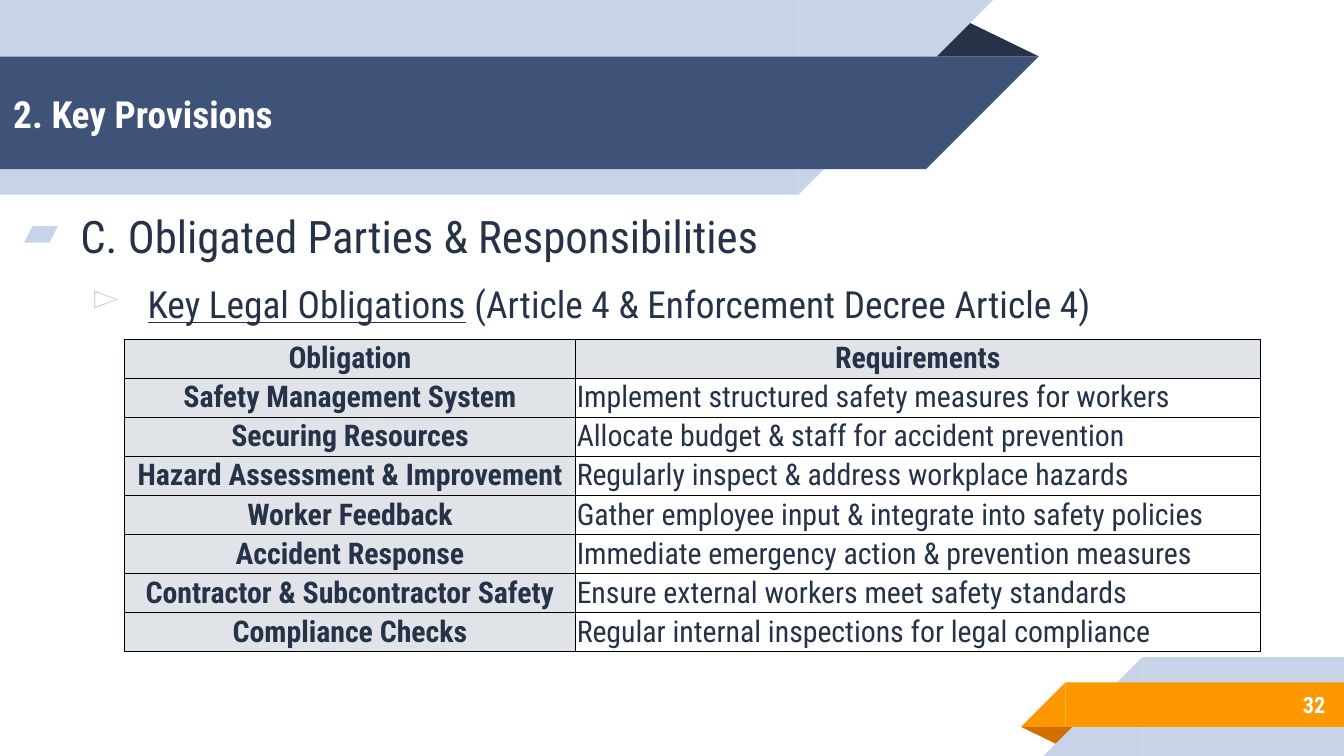
from lxml.etree import SubElement
from pptx import Presentation
from pptx.dml.color import RGBColor
from pptx.enum.shapes import MSO_SHAPE as Shape
from pptx.enum.text import MSO_ANCHOR as Anchor, PP_ALIGN as Align
from pptx.oxml.ns import qn
from pptx.util import Cm, Pt

FONT = "Roboto Condensed"
WHITE = RGBColor(0xFF, 0xFF, 0xFF)
BLACK = RGBColor(0x00, 0x00, 0x00)
INK = RGBColor(0x26, 0x32, 0x48)
NAVY = RGBColor(0x3F, 0x53, 0x78)
PALE = RGBColor(0xC7, 0xD3, 0xE6)
ORANGE = RGBColor(0xFF, 0x98, 0x00)
RUST = RGBColor(0xD2, 0x6F, 0x00)
GREY = RGBColor(0xE0, 0xE4, 0xE9)

# Content
TITLE = "2. Key Provisions"
PAGE_NUMBER = "32"
# bullet, indent in cm, size, space before, runs of (text, underlined)
OUTLINE = [
    ("▰", 1.27, 24, 0, [("C. Obligated Parties & Responsibilities", False)]),
    ("▻", 2.54, 20, 10, [("Key Legal Obligations", True),
                         (" (Article 4 & Enforcement Decree Article 4)", False)]),
]
OBLIGATIONS = [
    ("Obligation", "Requirements"),
    ("Safety Management System", "Implement structured safety measures for workers"),
    ("Securing Resources", "Allocate budget & staff for accident prevention"),
    ("Hazard Assessment & Improvement", "Regularly inspect & address workplace hazards"),
    ("Worker Feedback", "Gather employee input & integrate into safety policies"),
    ("Accident Response", "Immediate emergency action & prevention measures"),
    ("Contractor & Subcontractor Safety", "Ensure external workers meet safety standards"),
    ("Compliance Checks", "Regular internal inspections for legal compliance"),
]

# Layout in cm
SLIDE_W, SLIDE_H = 25.4, 14.29
HANGING = 1.07
COLUMNS = (8.51, 12.95)
ROW_H = 0.71

prs = Presentation()
prs.slide_width, prs.slide_height = Cm(SLIDE_W), Cm(SLIDE_H)
slide = prs.slides.add_slide(prs.slide_layouts[6])


def add_filled(kind, left, top, width, height, color, rotation=0, flip=False):
    shape = slide.shapes.add_shape(kind, Cm(left), Cm(top), Cm(width), Cm(height))
    shape.shadow.inherit = False
    shape.fill.solid()
    shape.fill.fore_color.rgb = color
    shape.line.fill.background()
    shape.rotation = rotation
    if flip:
        shape.element.spPr.find(qn("a:xfrm")).set("flipH", "1")
    return shape


def add_fold(left, top, width, height, color, rotation=0):
    fold = add_filled(Shape.ISOSCELES_TRIANGLE, left, top, width, height, color, rotation)
    fold.adjustments[0] = 0.324


def add_top_band(top, width, height, color):
    """Band from the left edge that ends in a 45 degree slant."""
    add_filled(Shape.RECTANGLE, 0, top, width, height, color)
    add_filled(Shape.RIGHT_TRIANGLE, width, top, height, height, color, 180, True)


def add_bottom_band(left, top, height, color):
    """Band to the right edge that starts with a 45 degree slant."""
    add_filled(Shape.RECTANGLE, left, top, SLIDE_W - left, height, color)
    add_filled(Shape.RIGHT_TRIANGLE, left - height, top, height, height, color, 0, True)


def add_run(paragraph, text, size, color, **styles):
    run = paragraph.add_run()
    run.text = text
    run.font.color.rgb = color
    for name, value in {"name": FONT, "size": Pt(size), **styles}.items():
        setattr(run.font, name, value)


def add_text_frame(left, top, width, height, anchor):
    box = slide.shapes.add_textbox(Cm(left), Cm(top), Cm(width), Cm(height))
    frame = box.text_frame
    frame.word_wrap = True
    frame.vertical_anchor = anchor
    for side in ("left", "top", "right", "bottom"):
        setattr(frame, f"margin_{side}", Cm(0.25))
    return frame


def add_bullet(paragraph, bullet, indent):
    props = paragraph._p.get_or_add_pPr()
    props.set("marL", str(Cm(indent)))
    props.set("indent", str(-Cm(HANGING)))
    SubElement(SubElement(props, qn("a:buClr")), qn("a:srgbClr"), val=str(PALE))
    SubElement(props, qn("a:buChar"), char=bullet)


def add_borders(cell):
    props = cell._tc.get_or_add_tcPr()
    for index, side in enumerate(("lnL", "lnR", "lnT", "lnB")):
        line = SubElement(props, qn(f"a:{side}"), w=str(Pt(0.75)))
        SubElement(SubElement(line, qn("a:solidFill")), qn("a:srgbClr"), val=str(BLACK))
        props.insert(index, line)


# Ribbons in the bottom and top corners
add_fold(19.3, 13.74, 1.09, 0.36, RUST, 180)
add_bottom_band(21.59, 12.42, 1.87, PALE)
add_bottom_band(20.14, 12.9, 0.84, ORANGE)
add_fold(17.48, 0.36, 2.16, 0.71, INK)
add_top_band(0, 15.09, 3.68, PALE)
add_top_band(1.07, 17.5, 2.13, NAVY)

# Title and page number
title = add_text_frame(0, 1.09, 18.49, 2.13, Anchor.MIDDLE)
add_run(title.paragraphs[0], TITLE, 20, WHITE, bold=True)
number = add_text_frame(21.16, 12.88, 4.14, 0.89, Anchor.MIDDLE)
number.paragraphs[0].alignment = Align.RIGHT
add_run(number.paragraphs[0], PAGE_NUMBER, 12, WHITE, bold=True)

# Outline above the table
outline = add_text_frame(0, 3.7, SLIDE_W, 2.67, Anchor.TOP)
for i, (bullet, indent, size, before, runs) in enumerate(OUTLINE):
    paragraph = outline.add_paragraph() if i else outline.paragraphs[0]
    paragraph.space_before = Pt(before)
    add_bullet(paragraph, bullet, indent)
    for text, underlined in runs:
        add_run(paragraph, text, size, INK, underline=underlined)

# Table of obligations
table = slide.shapes.add_table(
    len(OBLIGATIONS), len(COLUMNS), Cm(2.36), Cm(6.41),
    Cm(sum(COLUMNS)), Cm(ROW_H * len(OBLIGATIONS))).table
for column, width in zip(table.columns, COLUMNS):
    column.width = Cm(width)
for r, row in enumerate(OBLIGATIONS):
    table.rows[r].height = Cm(ROW_H)
    for c, text in enumerate(row):
        cell = table.cell(r, c)
        heading = r == 0 or c == 0
        cell.vertical_anchor = Anchor.MIDDLE
        for side in ("left", "top", "right", "bottom"):
            setattr(cell, f"margin_{side}", Cm(0.03))
        if heading:
            cell.fill.solid()
            cell.fill.fore_color.rgb = GREY
        else:
            cell.fill.background()
        add_borders(cell)
        paragraph = cell.text_frame.paragraphs[0]
        paragraph.alignment = Align.CENTER if heading else Align.LEFT
        add_run(paragraph, text, 16, INK, bold=heading)

prs.save("out.pptx")
